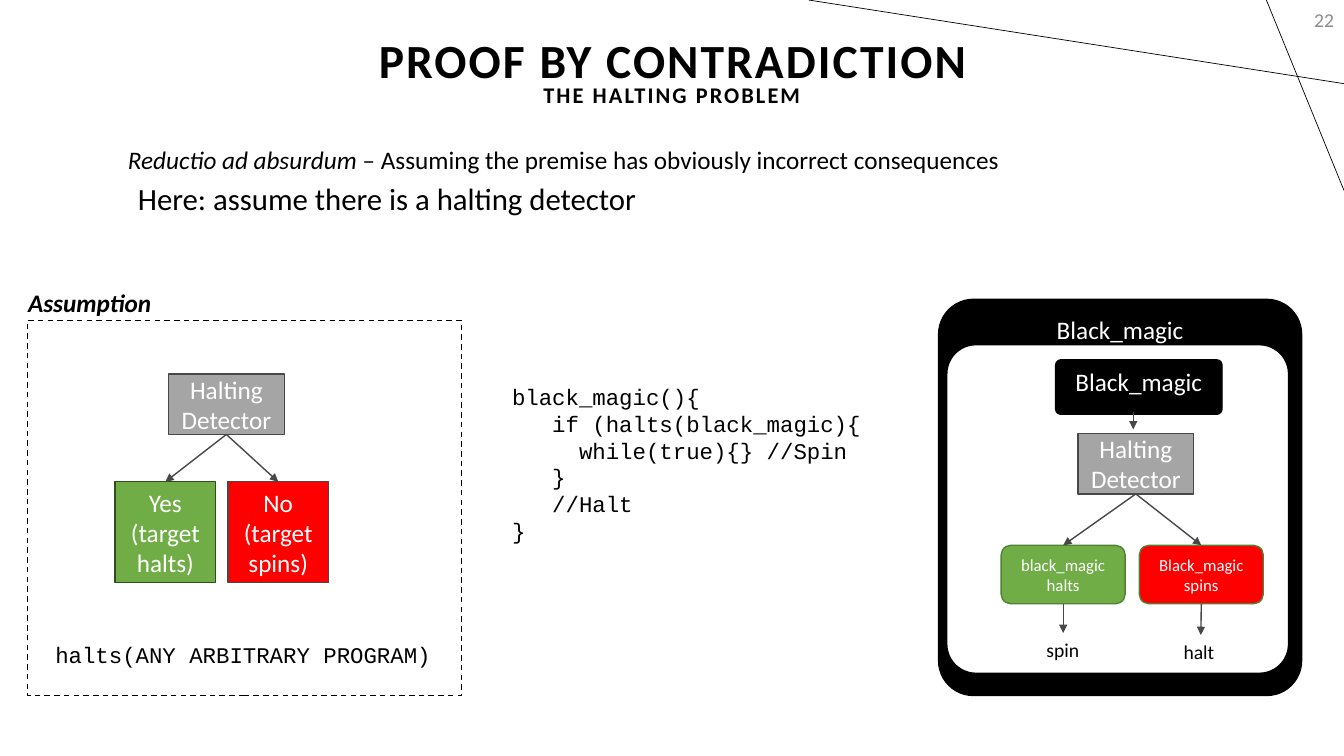
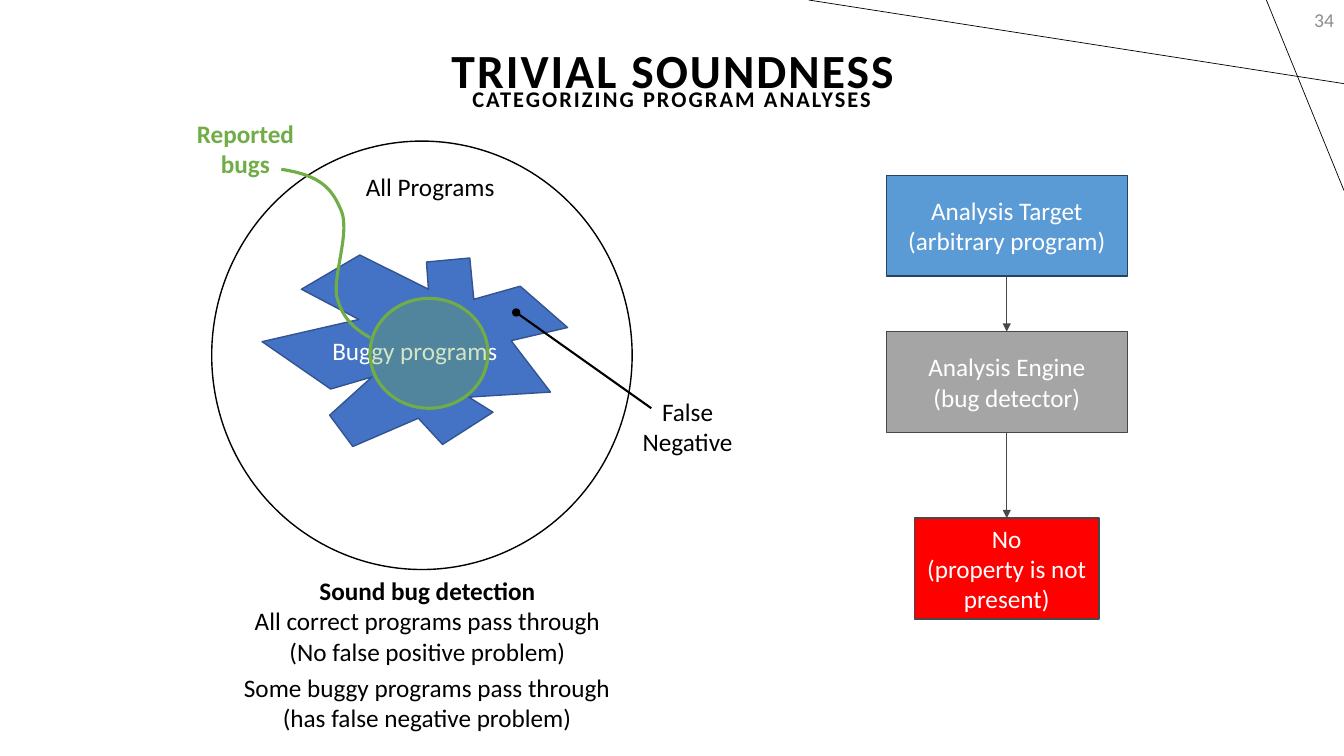
from lxml import etree
from pptx import Presentation
from pptx import util as u
from pptx.dml.color import RGBColor
from pptx.enum import dml, shapes, text
from pptx.oxml import ns

BLACK, WHITE, GRAY, DARK = "000000", "FFFFFF", "A5A5A5", "484848"
GREEN, RED, BLUE, SKY = "70AD47", "FF0000", "4472C4", "5B9BD5"
DARK_GREEN, DARK_BLUE, PAGE_GRAY = "538035", "325491", "8C8C8C"
FONT, MONO = "Calibri", "Courier New"
LEFT, CENTER, RIGHT = text.PP_ALIGN.LEFT, text.PP_ALIGN.CENTER, text.PP_ALIGN.RIGHT
TOP, MIDDLE = text.MSO_ANCHOR.TOP, text.MSO_ANCHOR.MIDDLE
RECT, ROUND, OVAL = (shapes.MSO_SHAPE.RECTANGLE, shapes.MSO_SHAPE.ROUNDED_RECTANGLE,
                     shapes.MSO_SHAPE.OVAL)
HEADING = dict(bold=True, spacing=1.5, align=CENTER, anchor=MIDDLE, line_spacing=0.9)


def rgb(value):
    return RGBColor.from_string(value)


def inches(*values):
    return [u.Inches(v) for v in values]


def add_run(p, content, size=18, color=BLACK, font=FONT, bold=False, italic=False, spacing=0):
    r = p.add_run()
    r.text = content
    r.font.size, r.font.name = u.Pt(size), font
    r.font.bold, r.font.italic = bold, italic
    r.font.color.rgb = rgb(color)
    if spacing:
        r._r.get_or_add_rPr().set("spc", str(int(spacing * 100)))


def write(tf, content, align=LEFT, anchor=TOP, wrap=True, line_spacing=None, **run_format):
    tf.word_wrap, tf.vertical_anchor = wrap, anchor
    tf.auto_size = text.MSO_AUTO_SIZE.NONE
    for i, line in enumerate(content.split("\n")):
        p = tf.add_paragraph() if i else tf.paragraphs[0]
        p.alignment = align
        if line_spacing:
            p.line_spacing = line_spacing
        add_run(p, line, **run_format)


def label(slide, at, content, **fmt):
    sp = slide.shapes.add_textbox(*inches(*at))
    write(sp.text_frame, content, **fmt)
    return sp


def paint(sp, fill, line, width=1, alpha=None):
    sp.shadow.inherit = False
    if fill:
        sp.fill.solid()
        sp.fill.fore_color.rgb = rgb(fill)
    else:
        sp.fill.background()
    if alpha:
        color = sp.element.spPr.find(".//" + ns.qn("a:srgbClr"))
        etree.SubElement(color, ns.qn("a:alpha")).set("val", str(alpha * 1000))
    sp.line.color.rgb = rgb(line)
    sp.line.width = u.Pt(width)


def block(slide, kind, at, fill, line=DARK, content="", radius=None, width=1, alpha=None,
          anchor=MIDDLE, **fmt):
    sp = slide.shapes.add_shape(kind, *inches(*at))
    if radius:
        sp.adjustments[0] = radius
    paint(sp, fill, line, width, alpha)
    if content:
        write(sp.text_frame, content, align=CENTER, anchor=anchor, color=WHITE, **fmt)
    return sp


def outline(slide, points, fill, line, width=1, close=True):
    start, *rest = [inches(*point) for point in points]
    builder = slide.shapes.build_freeform(*start)
    builder.add_line_segments(rest, close=close)
    sp = builder.convert_to_shape()
    paint(sp, fill, line, width)
    return sp


def bezier_points(start, curves, steps=16):
    points = [start]
    for c1, c2, end in curves:
        start = points[-1]
        for i in range(1, steps + 1):
            t = i / steps
            s = 1 - t
            points.append([s**3 * a + 3 * s * s * t * b + 3 * s * t * t * c + t**3 * d
                           for a, b, c, d in zip(start, c1, c2, end)])
    return points


def connector(slide, start=(0, 0), end=(0, 0), color=DARK, width=1, tail="triangle"):
    c = slide.shapes.add_connector(shapes.MSO_CONNECTOR.STRAIGHT, *inches(*start, *end))
    c.line.color.rgb = rgb(color)
    c.line.width = u.Pt(width)
    pr = c.element.spPr
    if tail:
        etree.SubElement(pr.get_or_add_ln(), ns.qn("a:tailEnd")).set("type", tail)
    etree.SubElement(pr, ns.qn("a:effectLst"))
    return c


def link_down(slide, upper, *lowers):
    for lower in lowers:
        c = connector(slide)
        c.begin_connect(upper, 2)
        c.end_connect(lower, 0)


def decorate_layout(layout, slide):
    for start, end in (((13.33, 0.83), (8.02, 0)), ((12.56, 0), (13.33, 1.89))):
        c = connector(slide, start, end, BLACK, 0.5, tail=None)
        layout.shapes.element.insert(2, c.element)


def add_slide(prs, layout, title, subtitle, number, title_top, subtitle_top):
    slide = prs.slides.add_slide(layout)
    sp = slide.shapes.title
    sp.left, sp.top, sp.width, sp.height = inches(0.02, title_top, 13.31, 1.45)
    write(sp.text_frame, title, size=34, **HEADING)
    label(slide, (10.33, 0, 3, 0.4), number, size=14, color=PAGE_GRAY, align=RIGHT, anchor=MIDDLE)
    label(slide, (0.01, subtitle_top, 13.31, 1.45), subtitle, size=16, **HEADING)
    return slide


def draw_assumption(slide):
    frame = block(slide, RECT, (0.27, 3.18, 4.31, 3.72), WHITE, BLACK)
    frame.line.dash_style = dml.MSO_LINE.DASH
    detector = block(slide, RECT, (1.67, 3.71, 1.15, 0.6), GRAY, content="Halting Detector")
    yes = block(slide, RECT, (1.14, 4.78, 1, 1), GREEN, "314C1F", "Yes\n(target halts)")
    no = block(slide, RECT, (2.26, 4.78, 1, 1), RED, content="No\n(target spins)")
    link_down(slide, detector, yes, no)
    label(slide, (0.45, 6.31, 3.98, 0.37), "halts(ANY ARBITRARY PROGRAM)",
          size=16, font=MONO, wrap=False)
    label(slide, (0.18, 2.8, 1.5, 0.4), "Assumption", bold=True, italic=True, wrap=False)


def draw_black_magic(slide):
    block(slide, ROUND, (9.31, 2.97, 3.6, 3.93), BLACK, BLACK, "Black_magic", 0.096, anchor=TOP)
    block(slide, ROUND, (9.39, 3.42, 3.39, 3.26), WHITE, BLACK, radius=0.089)
    block(slide, ROUND, (10.47, 3.57, 1.65, 0.54), BLACK, BLACK, "Black_magic", 0.096, anchor=TOP)
    connector(slide, (11.24, 4.09), (11.24, 4.26))
    detector = block(slide, RECT, (10.69, 4.3, 1.15, 0.6), GRAY, content="Halting Detector")
    for left, fill, verdict, result, at in (
            (9.93, GREEN, "black_magic halts", "spin", (10.28, 6.28, 0.53, 0.34)),
            (11.3, RED, "Black_magic spins", "halt", (11.64, 6.3, 0.54, 0.34))):
        outcome = block(slide, ROUND, (left, 5.41, 1.23, 0.58), fill, DARK_GREEN, verdict, size=12)
        link_down(slide, detector, outcome)
        link_down(slide, outcome, label(slide, at, result, size=14, wrap=False))


def fill_contradiction(slide):
    sp = label(slide, (1.17, 1.38, 11.15, 0.4), "Reductio ad absurdum – ", italic=True)
    add_run(sp.text_frame.paragraphs[0],
            "Assuming the premise has obviously incorrect consequences")
    label(slide, (1.27, 1.73, 6.9, 0.47), "Here: assume there is a halting detector", size=22)
    draw_assumption(slide)
    code = ("black_magic(){\n   if (halts(black_magic){\n     while(true){} //Spin\n"
            "   }\n   //Halt\n}")
    label(slide, (4.98, 3.75, 3.85, 1.72), code, size=16, font=MONO, wrap=False)
    draw_black_magic(slide)


def draw_program_sets(slide):
    block(slide, OVAL, (2.1, 1.4, 4.17, 4.25), WHITE, BLACK)
    label(slide, (3.53, 1.65, 1.49, 0.4), "All Programs", wrap=False)
    buggy = outline(slide, [
        (4.25, 2.87), (3.57, 2.53), (2.99, 2.87), (3.56, 3.17), (2.6, 3.39),
        (3.28, 3.86), (3.69, 3.74), (3.27, 4.12), (3.5, 4.43), (4.15, 4.15),
        (4.39, 4.41), (4.89, 4.09), (4.65, 3.94), (5.46, 3.89), (5.07, 3.38),
        (5.63, 3.25), (5.16, 2.84), (4.7, 2.97), (4.66, 2.56), (4.23, 2.6)], BLUE, DARK_BLUE)
    write(buggy.text_frame, "Buggy programs", align=CENTER, anchor=MIDDLE, color=WHITE)
    block(slide, OVAL, (3.67, 2.96, 1.17, 1.09), GREEN, GREEN, width=2.25, alpha=31)
    label(slide, (1.85, 1.12, 1.17, 0.71), "Reported\nbugs",
          color=GREEN, bold=True, align=CENTER, wrap=False)
    pointer = bezier_points((2.79, 1.68), [
        ((3.18, 1.74), (3.29, 1.87), (3.38, 2.08)),
        ((3.48, 2.29), (3.3, 2.73), (3.34, 2.94)),
        ((3.39, 3.15), (3.51, 3.26), (3.67, 3.35))])
    outline(slide, pointer, None, GREEN, 2.25, close=False)
    connector(slide, (6.46, 4.05), (5.12, 3.1), BLACK, 1.5, "oval")
    label(slide, (6.27, 3.88, 1.1, 0.71), "False\nNegative", align=CENTER, wrap=False)


def fill_soundness(slide):
    draw_program_sets(slide)
    for at, content, bold in (
            ((3.06, 5.66, 2.36, 0.4), "Sound bug detection", True),
            ((2.41, 5.96, 3.66, 0.71),
             "All correct programs pass through\n(No false positive problem)", False),
            ((2.3, 6.62, 3.87, 0.71),
             "Some buggy programs pass through\n(has false negative problem)", False)):
        label(slide, at, content, bold=bold, align=CENTER, wrap=False)
    target = block(slide, RECT, (8.79, 1.74, 2.39, 1), SKY, "28445D",
                   "Analysis Target\n(arbitrary program)")
    engine = block(slide, RECT, (8.79, 3.29, 2.39, 1), GRAY,
                   content="Analysis Engine\n(bug detector)")
    verdict = block(slide, RECT, (9.07, 5.14, 1.83, 1), RED,
                    content="No\n(property is not present)")
    link_down(slide, target, engine)
    link_down(slide, engine, verdict)


def main():
    prs = Presentation()
    prs.slide_width, prs.slide_height = inches(13.33, 7.5)
    layout = prs.slide_layouts[5]
    contradiction = add_slide(prs, layout, "PROOF BY CONTRADICTION", "THE HALTING PROBLEM",
                              "22", -0.1, 0.23)
    decorate_layout(layout, contradiction)
    fill_contradiction(contradiction)
    soundness = add_slide(prs, layout, "TRIVIAL SOUNDNESS", "CATEGORIZING PROGRAM ANALYSES",
                          "34", 0, 0.27)
    fill_soundness(soundness)
    prs.save("out.pptx")


if __name__ == "__main__":
    main()
